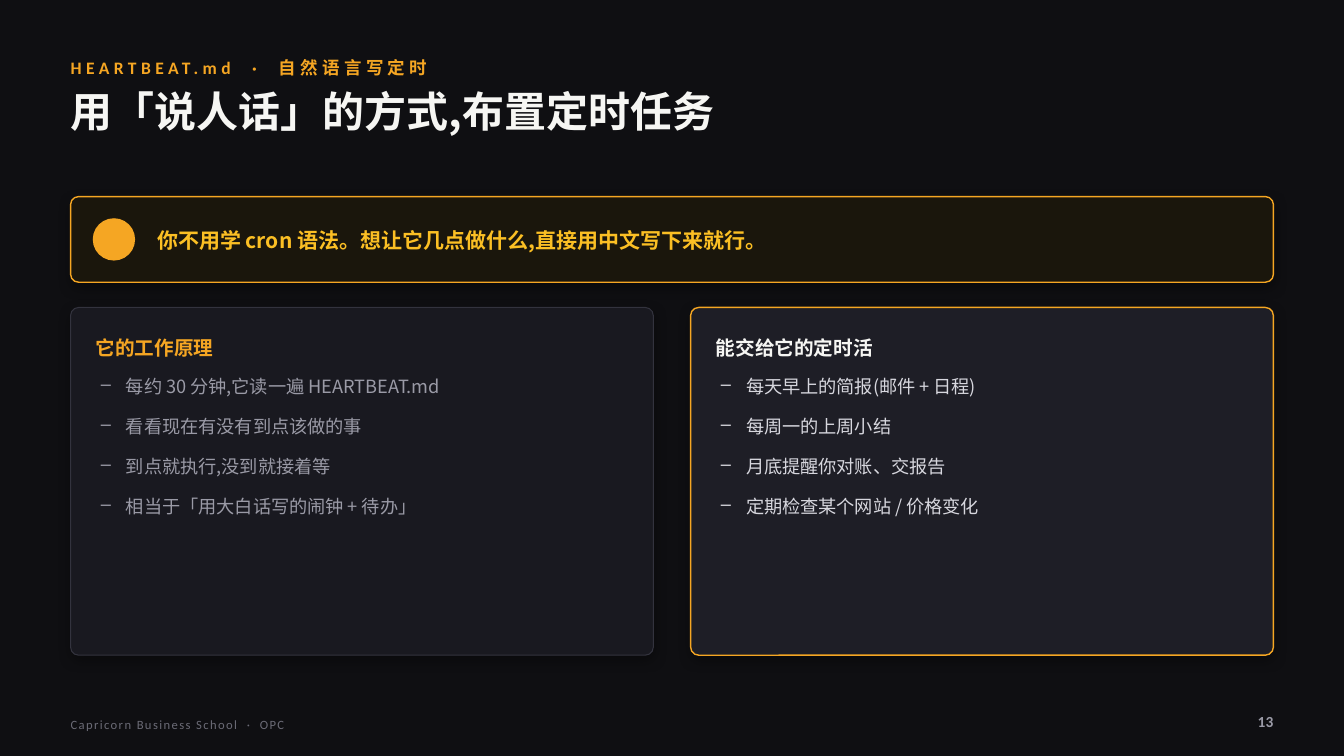
from lxml import etree
from pptx import Presentation
from pptx.dml.color import RGBColor
from pptx.enum.shapes import MSO_SHAPE
from pptx.enum.text import MSO_ANCHOR, MSO_AUTO_SIZE, PP_ALIGN
from pptx.oxml.ns import qn
from pptx.util import Pt

ROUNDED, OVAL = MSO_SHAPE.ROUNDED_RECTANGLE, MSO_SHAPE.OVAL
TOP, MIDDLE = MSO_ANCHOR.TOP, MSO_ANCHOR.MIDDLE
LEFT, RIGHT = PP_ALIGN.LEFT, PP_ALIGN.RIGHT
NO_FIT = MSO_AUTO_SIZE.NONE

# Content
EYEBROW = "HEARTBEAT.md  ·  自然语言写定时"
TITLE = "用「说人话」的方式,布置定时任务"
CALLOUT = "你不用学 cron 语法。想让它几点做什么,直接用中文写下来就行。"
CARDS = [
    {
        "heading": "它的工作原理",
        "items": [
            "每约 30 分钟,它读一遍 HEARTBEAT.md",
            "看看现在有没有到点该做的事",
            "到点就执行,没到就接着等",
            "相当于「用大白话写的闹钟 + 待办」",
        ],
        "fill": "191920", "border": "33333E", "border_width": 0.75,
        "heading_color": "F5A623", "item_color": "9A9AA6",
    },
    {
        "heading": "能交给它的定时活",
        "items": [
            "每天早上的简报(邮件 + 日程)",
            "每周一的上周小结",
            "月底提醒你对账、交报告",
            "定期检查某个网站 / 价格变化",
        ],
        "fill": "1E1E26", "border": "F5A623", "border_width": 1,
        "heading_color": "F6F6F3", "item_color": "D7D7DE",
    },
]
FOOTER = "Capricorn Business School  ·  OPC"
PAGE_NUMBER = "13"

# Style and layout, in points
CJK, LATIN = "Noto Sans CJK SC", "Calibri"
AMBER, WHITE = "F5A623", "F6F6F3"
SLIDE_W, SLIDE_H = 960, 540
MARGIN = 50.4
CONTENT_W = SLIDE_W - 2 * MARGIN
CALLOUT_TOP, CALLOUT_H = 140.4, 61.2
DOT = 30.24
CARD_TOP, CARD_H, CARD_GAP = 219.6, 248.4, 26.64
CARD_W = (CONTENT_W - CARD_GAP) / len(CARDS)
CORNER = 5.76
INDENT = 18


def rgb(color):
    return RGBColor.from_string(color)


def place(item, left, top, width, height):
    item.left, item.top = Pt(left), Pt(top)
    item.width, item.height = Pt(width), Pt(height)


def write(frame, *lines, size, color, font=CJK, bold=False, anchor=MIDDLE,
          align=LEFT, tracking=0, line_spacing=None, space_after=None, bullet=None):
    frame.word_wrap = True
    frame.auto_size = NO_FIT
    frame.vertical_anchor = anchor
    frame.margin_left = frame.margin_right = frame.margin_top = frame.margin_bottom = 0
    for index, line in enumerate(lines):
        paragraph = frame.paragraphs[0] if index == 0 else frame.add_paragraph()
        if bullet:
            properties = paragraph._p.get_or_add_pPr()
            properties.set("marL", str(Pt(INDENT)))
            properties.set("indent", str(Pt(-INDENT)))
            etree.SubElement(properties, qn("a:buChar"), char=bullet)
        paragraph.alignment = align
        if line_spacing:
            paragraph.line_spacing = line_spacing
        if space_after:
            paragraph.space_after = Pt(space_after)
        run = paragraph.add_run()
        run.text = line
        run.font.size = Pt(size)
        run.font.bold = bold
        run.font.color.rgb = rgb(color)
        run.font.name = font
        run_properties = run._r.get_or_add_rPr()
        etree.SubElement(run_properties, qn("a:ea"), typeface=CJK)
        if tracking:
            run_properties.set("spc", str(round(tracking * 100)))


def add_text(slide, box, *lines, **style):
    write(slide.shapes.add_textbox(*map(Pt, box)).text_frame, *lines, **style)


def add_filled(slide, kind, box, fill):
    shape = slide.shapes.add_shape(kind, *map(Pt, box))
    shape.shadow.inherit = False
    shape.fill.solid()
    shape.fill.fore_color.rgb = rgb(fill)
    shape.line.fill.background()
    return shape


def add_panel(slide, box, fill, border, border_width):
    panel = add_filled(slide, ROUNDED, box, fill)
    panel.adjustments[0] = CORNER / box[3]
    panel.line.color.rgb = rgb(border)
    panel.line.width = Pt(border_width)
    # Soft shadow straight below the panel
    effects = panel._element.spPr.find(qn("a:effectLst"))
    shadow = etree.SubElement(effects, qn("a:outerShdw"), blurRad=str(Pt(9)),
                              dist=str(Pt(3)), dir="5400000", rotWithShape="0")
    shade = etree.SubElement(shadow, qn("a:srgbClr"), val="000000")
    etree.SubElement(shade, qn("a:alpha"), val="34000")


def add_card(slide, left, card):
    add_panel(slide, (left, CARD_TOP, CARD_W, CARD_H),
              card["fill"], card["border"], card["border_width"])
    add_text(slide, (left + 18, CARD_TOP + 14.4, 360, 28.8), card["heading"],
             size=14, color=card["heading_color"], bold=True)
    add_text(slide, (left + 21.6, CARD_TOP + 46.8, 374.4, 187.2), *card["items"],
             size=13, color=card["item_color"], anchor=TOP, bullet="–",
             line_spacing=1.12, space_after=11)


def main():
    deck = Presentation()
    deck.slide_width, deck.slide_height = Pt(SLIDE_W), Pt(SLIDE_H)
    slide = deck.slides.add_slide(deck.slide_layouts[5])
    slide.background.fill.solid()
    slide.background.fill.fore_color.rgb = rgb("0F0F12")

    # Heading
    add_text(slide, (MARGIN, 37.44, CONTENT_W, 21.6), EYEBROW,
             size=12.5, color=AMBER, font=LATIN, bold=True, tracking=3.2)
    title = slide.shapes.title
    place(title, MARGIN, 61.2, CONTENT_W, 64.8)
    write(title.text_frame, TITLE, size=30, color=WHITE, bold=True, anchor=TOP)

    # Callout
    add_panel(slide, (MARGIN, CALLOUT_TOP, CONTENT_W, CALLOUT_H), "1A160C", AMBER, 1)
    dot_inset = (CALLOUT_H - DOT) / 2
    add_filled(slide, OVAL, (MARGIN + 15.84, CALLOUT_TOP + dot_inset, DOT, DOT), AMBER)
    add_text(slide, (MARGIN + 61.92, CALLOUT_TOP, 779.76, CALLOUT_H), CALLOUT,
             size=15, color="FBBF24", bold=True, line_spacing=1.05)

    # Cards
    for column, card in enumerate(CARDS):
        add_card(slide, MARGIN + column * (CARD_W + CARD_GAP), card)

    # Footer
    add_text(slide, (MARGIN, 506.88, 504, 21.6), FOOTER,
             size=9, color="6B6B76", font=LATIN, tracking=1)
    add_text(slide, (SLIDE_W - MARGIN - 57.6, 504, 57.6, 23.04), PAGE_NUMBER,
             size=11, color="9A9AA6", font=LATIN, bold=True, align=RIGHT)

    deck.save("out.pptx")


if __name__ == "__main__":
    main()
